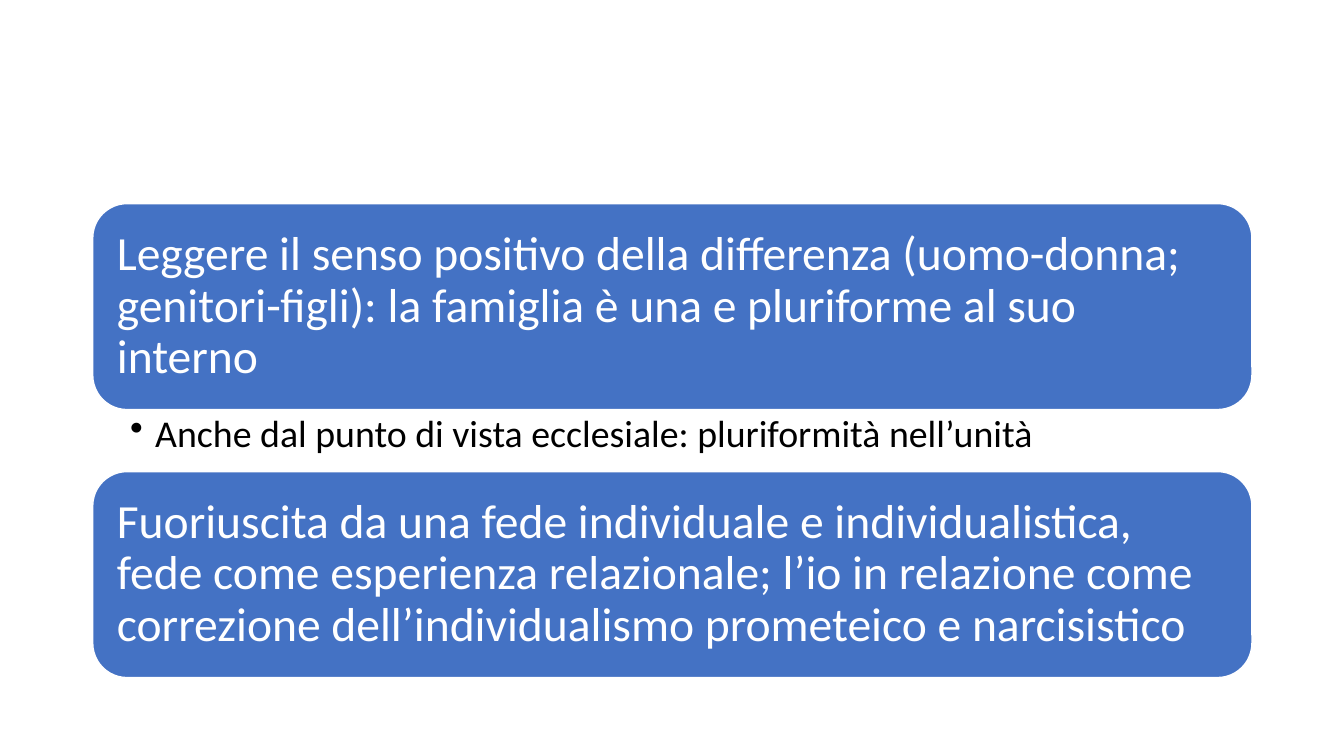
import dataclasses

import pptx
import pptx.dml.color
import pptx.enum.shapes
import pptx.enum.text
import pptx.oxml
import pptx.oxml.ns
import pptx.util

WIDE, HIGH = 13.33, 7.5
# Shares of the slide, in percent
LEFT, SPAN, TOP = 6.9, 86.25, 26.93


@dataclasses.dataclass
class Part:
    text: str
    share: float
    size: int
    ink: str
    pad: tuple[float, float, float, float]
    fill: str = ""
    bullet: str = ""


def card(text: str) -> Part:
    return Part(text, 27.25, 34, "FFFFFF", (0.14, 0.14, 0.14, 0.14), fill="4472C4")


PARTS = [
    card("Leggere il senso positivo della differenza (uomo-donna; "
         "genitori-figli): la famiglia è una e pluriforme al suo interno"),
    Part("Anche dal punto di vista ecclesiale: pluriformità nell’unità",
         8.2, 27, "000000", (0.37, 0.05, 0.26, 0.05), bullet="•"),
    card("Fuoriuscita da una fede individuale e individualistica, "
         "fede come esperienza relazionale; l’io in relazione come "
         "correzione dell’individualismo prometeico e narcisistico"),
]


def color(code: str) -> pptx.dml.color.RGBColor:
    return pptx.dml.color.RGBColor.from_string(code)


def across(share: float) -> int:
    return pptx.util.Inches(WIDE * share / 100)


def down(share: float) -> int:
    return pptx.util.Inches(HIGH * share / 100)


def apply(item: object, values: dict[str, object]) -> None:
    for name, value in values.items():
        setattr(item, name, value)


def mark(para: object, sign: str) -> None:
    """Give a paragraph a bullet with a hanging indent."""
    props = para._p.get_or_add_pPr()
    step = pptx.util.Inches(0.25)
    props.set("marL", str(step))
    props.set("indent", str(-step))
    bullet = pptx.oxml.parse_xml(
        f'<a:buChar {pptx.oxml.ns.nsdecls("a")} char="{sign}"/>')
    props.append(bullet)


def draw(slide: object, part: Part, top: float) -> None:
    place = across(LEFT), down(top), across(SPAN), down(part.share)
    anchor = pptx.enum.text.MSO_ANCHOR
    # Rounded card or plain text box
    if part.fill:
        kind = pptx.enum.shapes.MSO_SHAPE.ROUNDED_RECTANGLE
        shape = slide.shapes.add_shape(kind, *place)
        shape.shadow.inherit = False
        shape.fill.solid()
        shape.fill.fore_color.rgb = color(part.fill)
        shape.line.color.rgb = color("FFFFFF")
        shape.line.width = pptx.util.Pt(1)
    else:
        shape = slide.shapes.add_textbox(*place)
    # Text
    frame = shape.text_frame
    sides = ("margin_left", "margin_top", "margin_right", "margin_bottom")
    apply(frame, {side: pptx.util.Inches(pad) for side, pad in zip(sides, part.pad)})
    apply(frame, {"word_wrap": True,
                  "vertical_anchor": anchor.MIDDLE if part.fill else anchor.TOP})
    para = frame.paragraphs[0]
    apply(para, {"alignment": pptx.enum.text.PP_ALIGN.LEFT, "line_spacing": 0.9})
    if part.bullet:
        para.level = 1
        mark(para, part.bullet)
    run = para.add_run()
    run.text = part.text
    apply(run.font, {"name": "Calibri", "size": pptx.util.Pt(part.size)})
    run.font.color.rgb = color(part.ink)


def main() -> None:
    deck = pptx.Presentation()
    apply(deck, {"slide_width": pptx.util.Inches(WIDE),
                 "slide_height": pptx.util.Inches(HIGH)})
    slide = deck.slides.add_slide(deck.slide_layouts[6])
    # Stack the parts without gaps
    top = TOP
    for part in PARTS:
        draw(slide, part, top)
        top += part.share
    deck.save("out.pptx")


if __name__ == "__main__":
    main()
